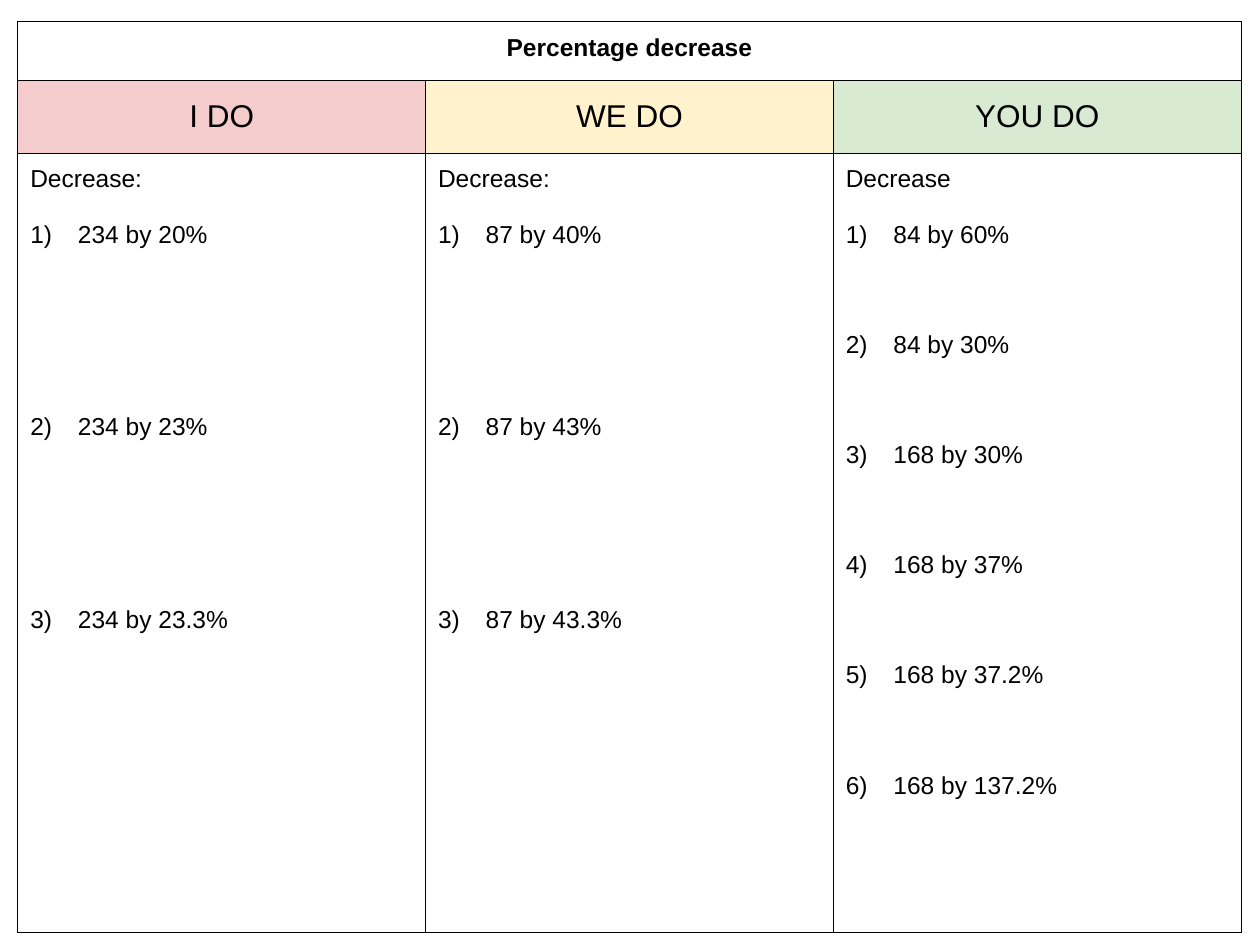
import pptx
import pptx.util
import pptx.dml.color
import pptx.enum.text
import pptx.oxml
import pptx.oxml.ns

Cm, Pt = pptx.util.Cm, pptx.util.Pt
ALIGN = pptx.enum.text.PP_ALIGN
ANCHOR = pptx.enum.text.MSO_ANCHOR
BLACK = "000000"
FONT = "Arial"
LINE = 15.75
ROWS = (1.19, 1.47, 15.7)
TITLE = "Percentage decrease"
PARTS = [
    ("I DO", "F4CCCC", "Decrease:", 6,
     ["234 by 20%", "234 by 23%", "234 by 23.3%"]),
    ("WE DO", "FFF2CC", "Decrease:", 6,
     ["87 by 40%", "87 by 43%", "87 by 43.3%"]),
    ("YOU DO", "D9EAD3", "Decrease", 3,
     ["84 by 60%", "84 by 30%", "168 by 30%",
      "168 by 37%", "168 by 37.2%", "168 by 137.2%"]),
]


def color(code):
    """Turn a hex string into a colour."""
    return pptx.dml.color.RGBColor.from_string(code)


def node(text):
    """Parse an XML element in the drawing namespace."""
    space = pptx.oxml.ns.nsdecls("a")
    return pptx.oxml.parse_xml(text.replace(" ", f" {space} ", 1))


def style(cell, fill=None, anchor=ANCHOR.TOP):
    """Give a cell its margins, borders, fill and anchor."""
    cell.margin_left = cell.margin_right = Cm(0.25)
    cell.margin_top = cell.margin_bottom = Cm(0.25)
    cell.vertical_anchor = anchor
    props = cell._tc.get_or_add_tcPr()
    for side in "LRTB":
        props.append(node(
            f'<a:ln{side} w="{Pt(0.75)}"><a:solidFill>'
            f'<a:srgbClr val="{BLACK}"/></a:solidFill></a:ln{side}>'))
    if fill:
        cell.fill.solid()
        cell.fill.fore_color.rgb = color(fill)
    else:
        cell.fill.background()


def write(para, text, size=14, bold=False, align=ALIGN.LEFT):
    """Add one run to a paragraph."""
    para.alignment = align
    run = para.add_run()
    run.text = text
    run.font.name = FONT
    run.font.size = Pt(size)
    run.font.bold = bold
    run.font.color.rgb = color(BLACK)


def number(para):
    """Give a paragraph a hanging automatic number."""
    props = para._p.get_or_add_pPr()
    props.set("marL", str(Cm(0.96)))
    props.set("indent", str(-Cm(0.96)))
    for text in (f'<a:buClr ><a:srgbClr val="{BLACK}"/></a:buClr>',
                 f'<a:buFont typeface="{FONT}"/>',
                 '<a:buAutoNum type="arabicParenR"/>'):
        props.append(node(text))


def tasks(cell, lead, gap, items):
    """Fill a cell with a lead line and spaced, numbered tasks."""
    style(cell)
    frame = cell.text_frame
    write(frame.paragraphs[0], lead)
    for index, item in enumerate(items):
        para = frame.add_paragraph()
        para.space_before = Pt(LINE * (gap if index else 1))
        write(para, item)
        number(para)


def grid(slide, left, top, width):
    """Build the lesson table in the given box."""
    count = len(PARTS)
    table = slide.shapes.add_table(
        len(ROWS), count, Cm(left), Cm(top), Cm(width), Cm(sum(ROWS))).table
    table.first_row = table.horz_banding = False
    for row, height in zip(table.rows, ROWS):
        row.height = Cm(height)
    for col in table.columns:
        col.width = Cm(width / count)
    head = table.cell(0, 0)
    head.merge(table.cell(0, count - 1))
    for cell in table.rows[0].cells:
        style(cell)
    write(head.text_frame.paragraphs[0], TITLE, bold=True, align=ALIGN.CENTER)
    for index, (name, fill, lead, gap, items) in enumerate(PARTS):
        cell = table.cell(1, index)
        style(cell, fill, ANCHOR.MIDDLE)
        write(cell.text_frame.paragraphs[0], name, 18, align=ALIGN.CENTER)
        tasks(table.cell(2, index), lead, gap, items)


def main():
    """Build and save the slide."""
    deck = pptx.Presentation()
    deck.slide_width, deck.slide_height = Cm(25.4), Cm(19.05)
    slide = deck.slides.add_slide(deck.slide_layouts[6])
    grid(slide, 0.36, 0.43, 24.66)
    deck.save("out.pptx")


if __name__ == "__main__":
    main()
